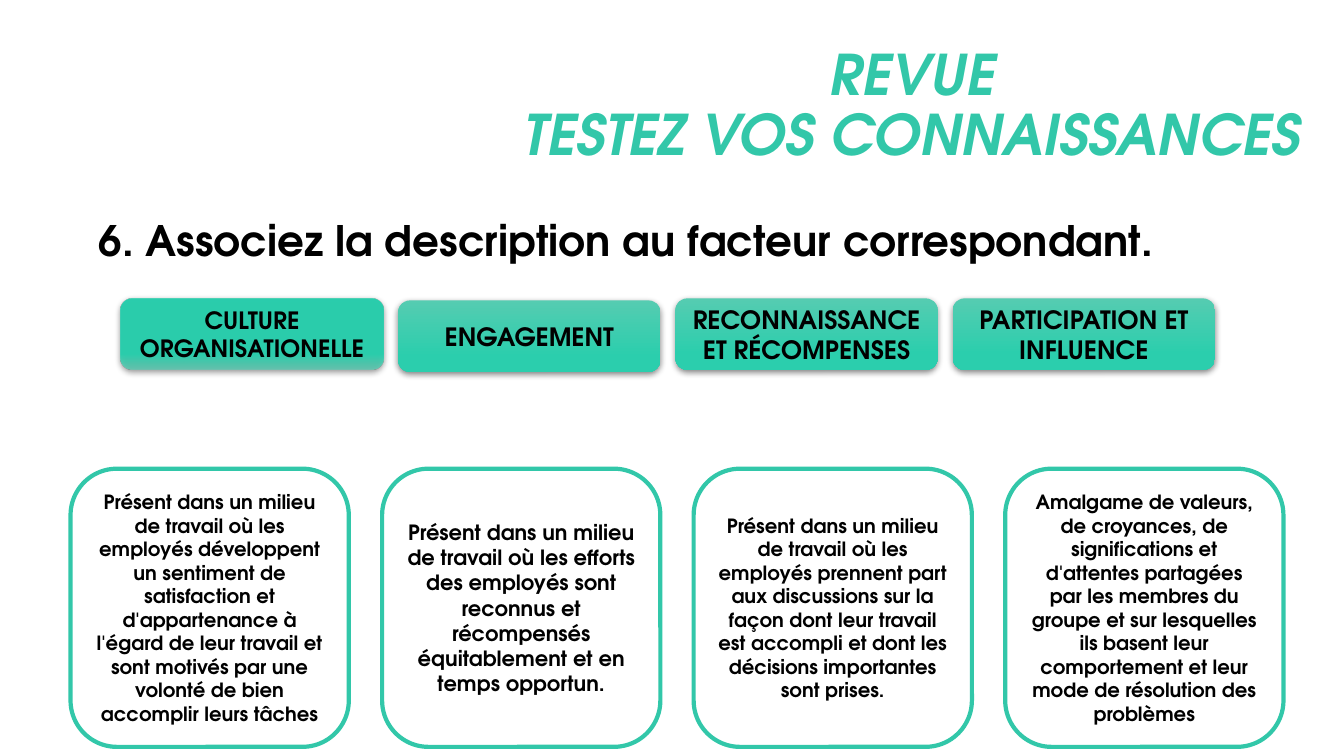
"""Builds a quiz slide matching four workplace factors with their descriptions."""
from pptx import Presentation
from pptx import util as u
from pptx.dml.color import RGBColor
from pptx.enum import shapes, text
from pptx.oxml import parse_xml
from pptx.oxml.ns import nsdecls

TITLE = "REVUE\vTESTEZ VOS CONNAISSANCES"
QUESTION = "6. Associez la description au facteur correspondant."
FADING = [(78, "2BCEAD", 100), (100, "55CCB1", 76)]
RISING = [(0, "55CCB1", 100), (78, "2BCEAD", 100)]
FACTORS = [
    ("CULTURE ORGANISATIONELLE", 17, 2.96, FADING),
    ("ENGAGEMENT", 18, 2.98, RISING),
    ("RECONNAISSANCE ET RÉCOMPENSES", 18, 2.96, RISING),
    ("PARTICIPATION ET INFLUENCE", 18, 2.96, RISING),
]
DESCRIPTIONS = [
    ("Présent dans un milieu de travail où les employés développent un sentiment "
     "de satisfaction et d'appartenance à l'égard de leur travail et sont motivés "
     "par une volonté de bien accomplir leurs tâches", 14),
    ("Présent dans un milieu de travail où les efforts des employés sont reconnus "
     "et récompensés équitablement et en temps opportun.", 15),
    ("Présent dans un milieu de travail où les employés prennent part aux "
     "discussions sur la façon dont leur travail est accompli et dont les "
     "décisions importantes sont prises.", 14),
    ("Amalgame de valeurs, de croyances, de significations et d'attentes partagées "
     "par les membres du groupe et sur lesquelles ils basent leur comportement et "
     "leur mode de résolution des problèmes", 14),
]
FONT = "TeX Gyre Adventor"
BLACK = RGBColor(0x00, 0x00, 0x00)
WHITE = RGBColor(0xFF, 0xFF, 0xFF)
TEAL = RGBColor(0x32, 0xC7, 0xA9)
FACTOR_LEFT, FACTOR_STEP, FACTOR_WIDTH, FACTOR_HEIGHT = 1.2, 2.75, 2.6, 0.71
CARD_LEFT, CARD_STEP, CARD_TOP, CARD_SIDE = 0.7, 3.09, 4.65, 2.76


def write(shape, words, size, color=BLACK, align=text.PP_ALIGN.CENTER,
          anchor=text.MSO_ANCHOR.MIDDLE, spacing=1.0, italic=False):
    frame = shape.text_frame
    frame.word_wrap = True
    frame.vertical_anchor = anchor
    frame.text = words
    para = frame.paragraphs[0]
    para.alignment = align
    para.line_spacing = spacing
    for span in para.runs:
        span.font.name = FONT
        span.font.size = u.Pt(size)
        span.font.bold = True
        span.font.italic = italic
        span.font.color.rgb = color


def add_text(slide, place, words, size, **style):
    box = slide.shapes.add_textbox(*map(u.Inches, place))
    write(box, words, size, **style)


def add_rounded(slide, *place):
    shape = slide.shapes.add_shape(shapes.MSO_SHAPE.ROUNDED_RECTANGLE, *map(u.Inches, place))
    shape.shadow.inherit = False
    return shape


def add_gradient(shape, stops):
    marks = "".join(
        f'<a:gs pos="{pos * 1000}"><a:srgbClr val="{color}">'
        f'<a:alpha val="{alpha * 1000}"/></a:srgbClr></a:gs>'
        for pos, color, alpha in stops)
    geometry = shape._element.spPr.find(".//{*}prstGeom")
    geometry.addnext(parse_xml(
        f'<a:gradFill {nsdecls("a")} rotWithShape="1"><a:gsLst>{marks}</a:gsLst>'
        '<a:lin ang="5400000" scaled="0"/></a:gradFill>'))


def add_shadow(shape):
    effects = shape._element.spPr.find("{*}effectLst")
    effects.append(parse_xml(
        f'<a:outerShdw {nsdecls("a")} blurRad="{u.Pt(4.5)}" dist="{u.Pt(1.5)}" '
        'dir="5400000" rotWithShape="0"><a:srgbClr val="000000">'
        '<a:alpha val="48000"/></a:srgbClr></a:outerShdw>'))


def main():
    deck = Presentation()
    deck.slide_width, deck.slide_height = u.Inches(13.33), u.Inches(7.5)
    slide = deck.slides.add_slide(deck.slide_layouts[6])

    for index, (name, size, top, stops) in enumerate(FACTORS):
        factor = add_rounded(slide, FACTOR_LEFT + index * FACTOR_STEP, top,
                             FACTOR_WIDTH, FACTOR_HEIGHT)
        factor.line.fill.background()
        add_gradient(factor, stops)
        add_shadow(factor)
        write(factor, name, size)

    for index, (description, size) in enumerate(DESCRIPTIONS):
        card = add_rounded(slide, CARD_LEFT + index * CARD_STEP, CARD_TOP,
                           CARD_SIDE, CARD_SIDE)
        card.fill.solid()
        card.fill.fore_color.rgb = WHITE
        card.line.color.rgb = TEAL
        card.line.width = u.Pt(3)
        write(card, description, size)

    add_text(slide, (0.88, 2.18, 11.63, 0.53), QUESTION, 30, spacing=0.8,
             align=text.PP_ALIGN.LEFT, anchor=text.MSO_ANCHOR.TOP)
    add_text(slide, (3.82, 0.36, 10.46, 1.41), TITLE, 40, color=TEAL,
             spacing=0.9, italic=True)
    deck.save("out.pptx")


if __name__ == "__main__":
    main()
